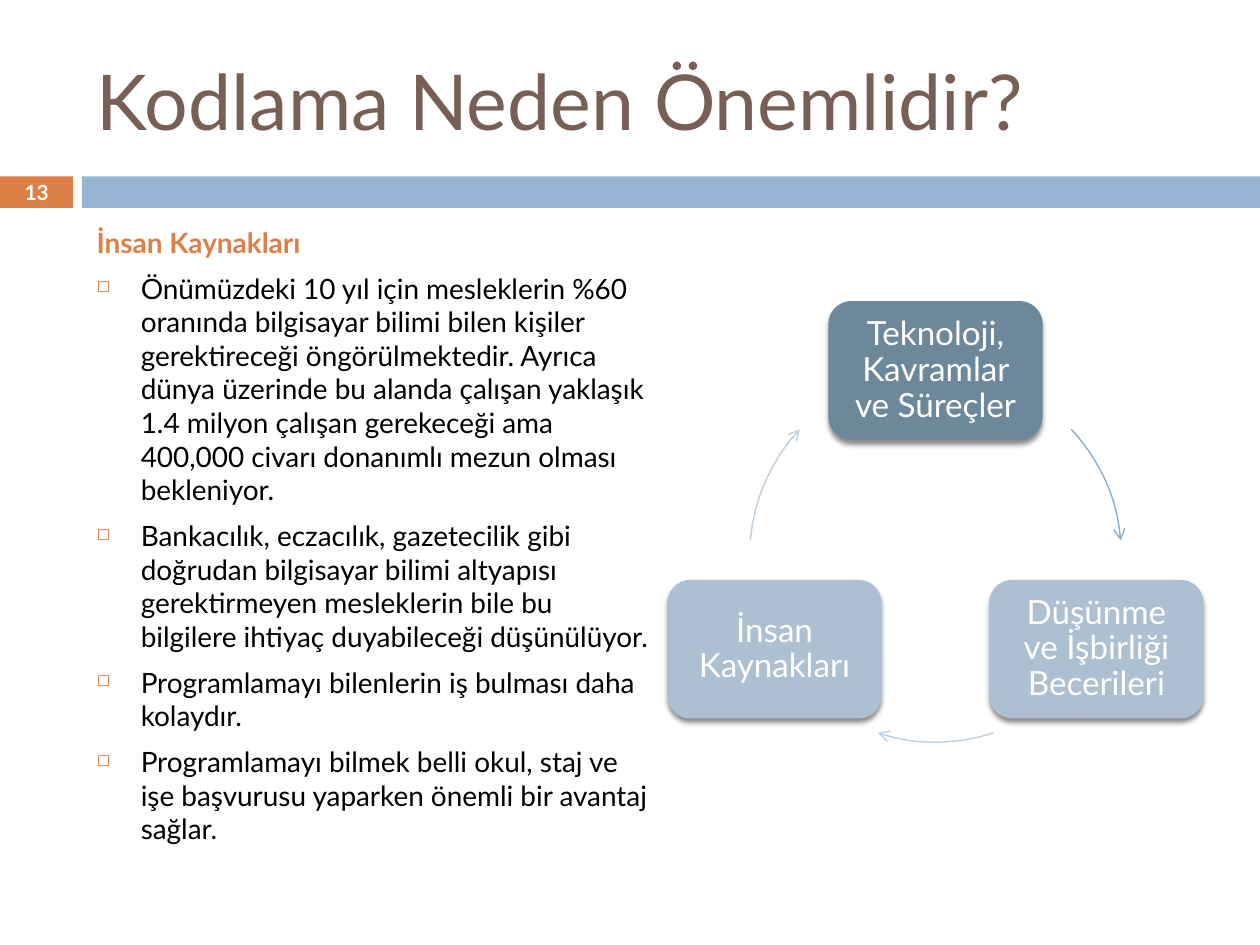
from math import cos, radians, sin

from lxml import etree
from pptx import Presentation
from pptx.dml.color import RGBColor
from pptx.enum.shapes import MSO_SHAPE
from pptx.enum.text import MSO_ANCHOR, PP_ALIGN
from pptx.oxml import parse_xml
from pptx.util import Pt

RECT, ROUND, ARC = MSO_SHAPE.RECTANGLE, MSO_SHAPE.ROUNDED_RECTANGLE, MSO_SHAPE.ARC
MIDDLE, TOP = MSO_ANCHOR.MIDDLE, MSO_ANCHOR.TOP
LEFT, CENTER = PP_ALIGN.LEFT, PP_ALIGN.CENTER
NS = "http://schemas.openxmlformats.org/drawingml/2006/main"
ORANGE, BLUE, BROWN, WHITE, BLACK = "DD8047", "94B6D2", "775F55", "FFFFFF", "000000"

# Content
TITLE = "Kodlama Neden Önemlidir?"
NUMBER = "13"
HEADING = "İnsan Kaynakları"
POINTS = [
    "Önümüzdeki 10 yıl için mesleklerin %60 oranında bilgisayar bilimi bilen "
    "kişiler gerektireceği öngörülmektedir. Ayrıca dünya üzerinde bu alanda "
    "çalışan yaklaşık 1.4 milyon çalışan gerekeceği ama 400,000 civarı donanımlı "
    "mezun olması bekleniyor.",
    "Bankacılık, eczacılık, gazetecilik gibi doğrudan bilgisayar bilimi altyapısı "
    "gerektirmeyen mesleklerin bile bu bilgilere ihtiyaç duyabileceği düşünülüyor.",
    "Programlamayı bilenlerin iş bulması daha kolaydır.",
    "Programlamayı bilmek belli okul, staj ve işe başvurusu yaparken önemli bir "
    "avantaj sağlar.",
]
# Cycle: text, box colour, then start angle, end angle and colour of the next arrow
CYCLE = [
    ("Teknoloji, Kavramlar ve Süreçler", "6D879B", 316.9, 355.1, "8DAEC9"),
    ("Düşünme ve İşbirliği Becerileri", "ACC0D2", 71.9, 108.1, "BCCEDF"),
    ("İnsan Kaynakları", "ACC0D2", 184.9, 223.1, "BCCEDF"),
]
MID_X, MID_Y, RADIUS = 534.6, 317.9, 106.2
BOX_W, BOX_H = 122.4, 79.2


def color(code):
    return RGBColor.from_string(code)


def add_xml(parent, body):
    for part in etree.fromstring(f'<x xmlns:a="{NS}">{body}</x>'):
        parent.append(parse_xml(etree.tostring(part)))


def set_frame(shape, anchor, **insets):
    frame = shape.text_frame
    look = {"word_wrap": True, "vertical_anchor": anchor}
    look.update({f"margin_{side}": Pt(gap) for side, gap in insets.items()})
    for name, value in look.items():
        setattr(frame, name, value)
    return frame


def write(para, text, size, code, bold=False, **look):
    for name, value in look.items():
        setattr(para, name, value)
    run = para.add_run()
    run.text = text
    for name, value in {"name": "Lato", "size": Pt(size), "bold": bold}.items():
        setattr(run.font, name, value)
    run.font.color.rgb = color(code)


def add_box(slide, kind, place, fill):
    box = slide.shapes.add_shape(kind, *map(Pt, place))
    box.shadow.inherit = False
    box.fill.solid()
    box.fill.fore_color.rgb = color(fill)
    box.line.fill.background()
    return box


def add_node(slide, text, fill, turn):
    left = MID_X + RADIUS * cos(radians(turn)) - BOX_W / 2
    top = MID_Y + RADIUS * sin(radians(turn)) - BOX_H / 2
    box = add_box(slide, ROUND, (left, top, BOX_W, BOX_H), fill)
    add_xml(box.shadow._element.find(f"{{{NS}}}effectLst"),
            '<a:outerShdw blurRad="38100" dist="30480" dir="5400000" rotWithShape="0">'
            '<a:srgbClr val="000000"><a:alpha val="45000"/></a:srgbClr></a:outerShdw>')
    frame = set_frame(box, MIDDLE, left=7, right=7, top=7, bottom=7)
    write(frame.paragraphs[0], text, 19, WHITE, alignment=CENTER, line_spacing=0.9)


def add_arrow(slide, start, end, code):
    arc = slide.shapes.add_shape(ARC, Pt(MID_X - RADIUS), Pt(MID_Y - RADIUS),
                                 Pt(2 * RADIUS), Pt(2 * RADIUS))
    arc.shadow.inherit = False
    arc.fill.background()
    for i, angle in enumerate((start, end)):
        arc.adjustments[i] = angle * 0.6  # 60000 units a degree, over 100000
    arc.line.color.rgb = color(code)
    arc.line.width = Pt(0.79)
    add_xml(arc.line._get_or_add_ln(), '<a:tailEnd type="arrow"/>')


def add_point(frame, text):
    para = frame.add_paragraph()
    write(para, text, 16, BLACK, space_before=Pt(7), alignment=LEFT)
    props = para._p.get_or_add_pPr()
    props.set("marL", str(Pt(25.2)))
    props.set("indent", str(-Pt(25.2)))
    add_xml(props, f'<a:buClr><a:srgbClr val="{ORANGE}"/></a:buClr>'
                   '<a:buSzPct val="60000"/><a:buChar char="◻"/>')


def main():
    deck = Presentation()
    deck.slide_width, deck.slide_height = Pt(720), Pt(540)
    slide = deck.slides.add_slide(deck.slide_layouts[6])

    # Band with the slide number
    tab = add_box(slide, RECT, (0, 100.8, 41.8, 18), ORANGE)
    frame = set_frame(tab, MIDDLE, left=0, right=0, top=0, bottom=0)
    write(frame.paragraphs[0], NUMBER, 11.9, WHITE, True, alignment=CENTER)
    add_box(slide, RECT, (46.8, 100.8, 673.2, 18), BLUE)

    # Title
    title = slide.shapes.add_textbox(Pt(48.2), Pt(18), Pt(642.2), Pt(77.8))
    write(set_frame(title, MIDDLE).paragraphs[0], TITLE, 44, BROWN)

    # Heading and points
    body = slide.shapes.add_textbox(Pt(48.2), Pt(125.3), Pt(333.4), Pt(360))
    frame = set_frame(body, TOP)
    write(frame.paragraphs[0], HEADING, 16, ORANGE, True, space_before=Pt(7))
    for text in POINTS:
        add_point(frame, text)

    # Cycle, clockwise from the top
    for i, (text, fill, start, end, code) in enumerate(CYCLE):
        add_node(slide, text, fill, -90 + i * 360 / len(CYCLE))
        add_arrow(slide, start, end, code)

    deck.save("out.pptx")


if __name__ == "__main__":
    main()
